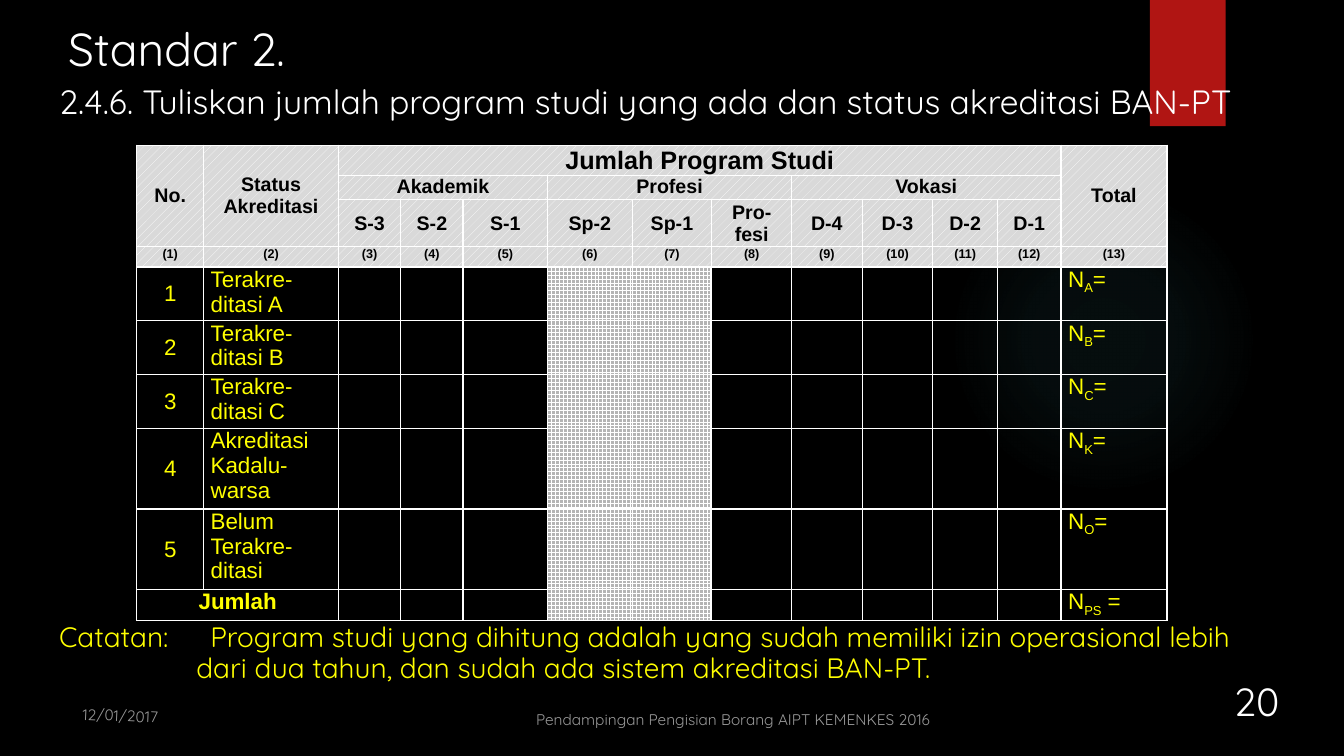
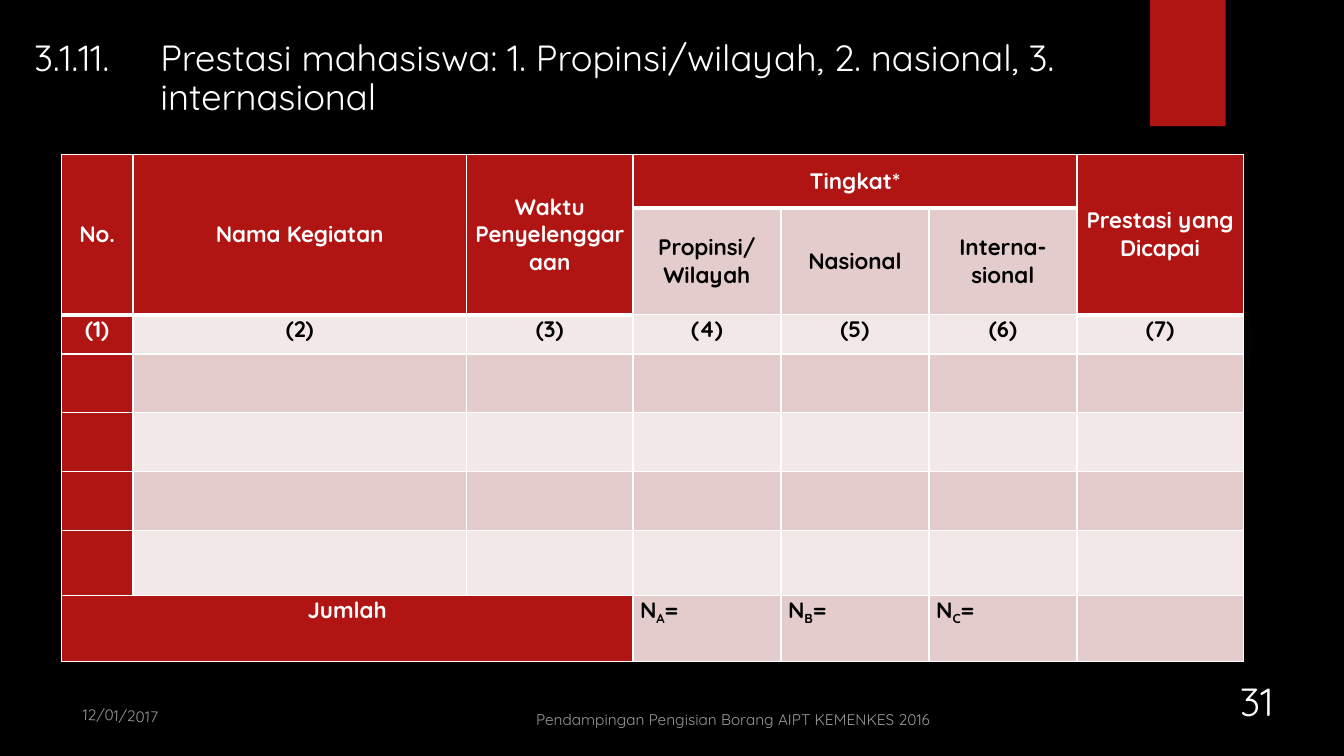
from lxml import etree
from pptx import Presentation
from pptx import util as u
from pptx.dml.color import RGBColor
from pptx.enum import dml, shapes, text
from pptx.oxml.ns import nsdecls, qn

WHITE, BLACK, YELLOW = "FFFFFF", "000000", "FFFF00"
RED, GLOW, PINK, PALE = "B01513", "50B9C1", "E4CCCC", "F2E8E7"
HATCH = (dml.MSO_PATTERN.PERCENT_20, WHITE, "D9D9D9")
MESH = (dml.MSO_PATTERN.CROSS, WHITE, "B4B4B4")
CENTER, JUSTIFY = text.PP_ALIGN.CENTER, text.PP_ALIGN.JUSTIFY
TOP, MIDDLE, BOTTOM = text.MSO_ANCHOR.TOP, text.MSO_ANCHOR.MIDDLE, text.MSO_ANCHOR.BOTTOM


def color(code):
    return RGBColor.from_string(code)


class Deck:
    """Holds the house style and the slide being built."""

    font = "Quicksand"

    def __init__(self):
        self.deck = Presentation()
        self.deck.slide_width, self.deck.slide_height = u.Cm(33.87), u.Cm(19.05)

    def start(self):
        self.page = self.deck.slides.add_slide(self.deck.slide_layouts[6])
        self.page.background.fill.solid()
        self.page.background.fill.fore_color.rgb = color(BLACK)
        self.glow(23.9, 4.65, 7.82)
        self.band(28.98, 0, 1.91, 3.18)

    def shape(self, kind, *place):
        shape = self.page.shapes.add_shape(kind, *map(u.Cm, place))
        shape.shadow.inherit = False
        shape.line.fill.background()
        return shape

    def band(self, *place):
        band = self.shape(shapes.MSO_SHAPE.RECTANGLE, *place)
        band.fill.solid()
        band.fill.fore_color.rgb = color(RED)

    def glow(self, left, top, size):
        glow = self.shape(shapes.MSO_SHAPE.OVAL, left, top, size, size)
        stops = "".join(
            f'<a:gs pos="{place}000"><a:srgbClr val="{GLOW}"><a:alpha val="{alpha}000"/></a:srgbClr></a:gs>'
            for place, alpha in ((0, 7), (36, 6), (69, 0)))
        fill = etree.fromstring(
            f'<a:gradFill {nsdecls("a")}><a:gsLst>{stops}</a:gsLst><a:path path="circle">'
            '<a:fillToRect l="50000" t="50000" r="50000" b="50000"/></a:path></a:gradFill>')
        glow._element.spPr.find(qn("a:prstGeom")).addnext(fill)

    def span(self, para, words, size, ink, bold=False, font=None, alpha=None):
        span = para.add_run()
        span.text = words
        span.font.size, span.font.bold = u.Pt(size), bold
        span.font.name = font or self.font
        span.font.color.rgb = color(ink)
        if alpha:
            tint = span._r.find(".//" + qn("a:srgbClr"))
            etree.SubElement(tint, qn("a:alpha"), val=str(alpha * 1000))
        return span

    def text_box(self, place, lines, size, ink=WHITE, spacing=None, align=None,
                 anchor=TOP, alpha=None, turn=0):
        box = self.page.shapes.add_textbox(*map(u.Cm, place))
        box.rotation = turn
        frame = box.text_frame
        frame.word_wrap, frame.vertical_anchor = True, anchor
        for number, (words, margin, indent, tab) in enumerate(lines):
            para = frame.add_paragraph() if number else frame.paragraphs[0]
            props = para._p.get_or_add_pPr()
            props.set("marL", str(u.Cm(margin)))
            props.set("indent", str(u.Cm(indent)))
            if tab:
                stops = etree.SubElement(props, qn("a:tabLst"))
                etree.SubElement(stops, qn("a:tab"), pos=str(u.Cm(tab)), algn="l")
            para.alignment = align
            if spacing:
                para.line_spacing = spacing
            self.span(para, words, size, ink, alpha=alpha)

    def line(self, place, words, size, hang=0, **style):
        self.text_box(place, [(words, hang, -hang, 0)], size, **style)

    def footer(self, number):
        self.line((30.73, 16.76, 1.88, 1.63), number, 28, align=CENTER, anchor=BOTTOM)
        self.line((13.26, 17.65, 10.72, 0.84), "Pendampingan Pengisian Borang AIPT KEMENKES 2016",
                  11, anchor=BOTTOM, alpha=60)
        self.line((1.83, 17.68, 2.74, 0.84), "12/01/2017", 11, alpha=60, turn=2.5)

    def borders(self, cell, **widths):
        props = cell._tc.get_or_add_tcPr()
        for side in "LRTB":
            line = etree.SubElement(props, qn(f"a:ln{side}"), w=str(u.Pt(widths.get(side, 1))))
            fill = etree.SubElement(line, qn("a:solidFill"))
            etree.SubElement(fill, qn("a:srgbClr"), val=WHITE)

    def paint(self, cell, fill):
        if fill is None:
            cell.fill.background()
        elif isinstance(fill, tuple):
            cell.fill.patterned()
            cell.fill.pattern = fill[0]
            cell.fill.fore_color.rgb, cell.fill.back_color.rgb = map(color, fill[1:])
        else:
            cell.fill.solid()
            cell.fill.fore_color.rgb = color(fill)

    def fill_cell(self, cell, words, fill, size, ink, bold, align, anchor, font):
        cell.margin_left = cell.margin_right = u.Cm(0.18)
        cell.margin_top = cell.margin_bottom = 0
        cell.vertical_anchor = anchor
        self.paint(cell, fill)
        para = cell.text_frame.paragraphs[0]
        para.alignment = align
        if not words:
            etree.SubElement(para._p, qn("a:endParaRPr"), sz=str(size * 100))
            return
        for part, piece in enumerate(words.split("|")):
            span = self.span(para, piece, size, ink, bold, font)
            if part % 2:
                span._r.get_or_add_rPr().set("baseline", "-25000")

    def table(self, left, top, widths, heights, rows, merges, style, heavy=()):
        frame = self.page.shapes.add_table(
            len(heights), len(widths), *map(u.Cm, (left, top, sum(widths), sum(heights))))
        table = frame.table
        table.first_row = table.horz_banding = False
        for column, width in zip(table.columns, widths):
            column.width = u.Cm(width)
        for row, height in zip(table.rows, heights):
            row.height = u.Cm(height)
        for first_row, first_col, last_row, last_col in merges:
            table.cell(first_row, first_col).merge(table.cell(last_row, last_col))
        for r, row in enumerate(rows):
            for c, words in enumerate(row):
                cell = table.cell(r, c)
                self.borders(cell, T=3 if (r - 1, c) in heavy else 1,
                             B=3 if (r, c) in heavy else 1)
                self.fill_cell(cell, words, **style(r, c))


def numbers(count):
    return [f"({n})" for n in range(1, count + 1)]


def accreditation_style(r, c):
    style = dict(font="Arial", align=CENTER, anchor=TOP)
    if r < 4:
        size = 9 if r == 3 else 18 if r == 0 and 2 <= c < 12 else 14
        anchor = MIDDLE if r in (0, 2) else TOP
        return style | dict(fill=HATCH, size=size, ink=BLACK, bold=True, anchor=anchor)
    total = r == 9 and c == 0
    style |= dict(fill=MESH if c in (5, 6) else None, size=16, ink=YELLOW, bold=total)
    if c:
        style["align"] = JUSTIFY
    elif not total:
        style["anchor"] = MIDDLE
    return style


def achievement_style(r, c):
    red = c == 0 or r == 0 or (r == 1 and c in (1, 2, 6)) or (r == 7 and c < 3)
    return dict(fill=RED if red else PINK if r % 2 else PALE, size=16,
                ink=WHITE if red else BLACK, bold=True, font=None,
                align=JUSTIFY if r == 7 and c > 2 else CENTER,
                anchor=MIDDLE if r < 2 else TOP)


def accreditation(deck):
    deck.start()
    deck.line((1.24, 2.03, 31.93, 1.4),
              "2.4.6. Tuliskan jumlah program studi yang ada dan status akreditasi BAN-PT",
              24, hang=2.54, spacing=0.9)
    deck.line((1.47, 0.76, 30.07, 1.27), "Standar 2.", 33, spacing=0.7)
    blank = [""] * 10
    statuses = [("Terakre- ditasi A", "A"), ("Terakre- ditasi B", "B"), ("Terakre- ditasi C", "C"),
                ("Akreditasi Kadalu-warsa", "K"), ("Belum Terakre-ditasi", "O")]
    rows = [
        ["No.", "Status Akreditasi", "Jumlah Program Studi", *[""] * 9, "Total"],
        ["", "", "Akademik", "", "", "Profesi", "", "", "Vokasi", "", "", "", ""],
        ["", "", "S-3", "S-2", "S-1", "Sp-2", "Sp-1", "Pro-fesi", "D-4", "D-3", "D-2", "D-1", ""],
        numbers(13),
        *[[str(n), status, *blank, f"N|{mark}|="] for n, (status, mark) in enumerate(statuses, 1)],
        ["Jumlah", "", *blank, "N|PS| ="],
    ]
    merges = [(0, 0, 2, 0), (0, 1, 2, 1), (0, 2, 0, 11), (0, 12, 2, 12),
              (1, 2, 1, 4), (1, 5, 1, 7), (1, 8, 1, 11), (9, 0, 9, 1)]
    deck.table(3.45, 3.66,
               [1.68, 3.4, 1.57, 1.57, 2.13, 2.13, 2.01, 2.01, 1.78, 1.78, 1.63, 1.6, 2.67],
               [0.71, 0.61, 1.12, 0.51, 1.24, 1.24, 1.24, 1.88, 1.88, 0.65],
               rows, merges, accreditation_style)
    deck.text_box((1.24, 15.59, 31.93, 1.9), [
        ("Catatan:\tProgram studi yang dihitung adalah yang sudah memiliki izin operasional lebih",
         0, 0, 3.14),
        ("dari dua tahun, dan sudah ada sistem akreditasi BAN-PT.", 3.46, 0, 0),
    ], 20, ink=YELLOW, spacing=0.9)
    deck.footer("20")


def achievements(deck):
    deck.start()
    deck.line((0.61, 0.89, 31.14, 2.4),
              "3.1.11.\tPrestasi mahasiswa: 1. Propinsi/wilayah, 2. nasional, 3. internasional",
              26, hang=3.18, spacing=0.9)
    rows = [
        ["No.", "Nama Kegiatan", "Waktu Penyelenggaraan", "Tingkat*", "", "", "Prestasi yang Dicapai"],
        ["", "", "", "Propinsi/Wilayah", "Nasional", "Interna-sional", ""],
        numbers(7),
        *[[""] * 7] * 4,
        ["Jumlah", "", "", "N|A|=", "N|B|=", "N|C|=", ""],
    ]
    tall = (0, 1, 2, 6)
    merges = [*[(0, c, 1, c) for c in tall], (0, 3, 0, 5), (7, 0, 7, 2)]
    heavy = {(0, c) for c in range(7)} | {(1, c) for c in tall}
    deck.table(1.55, 3.89, [1.8, 8.41, 4.19, 3.73, 3.73, 3.73, 4.19],
               [1.35, 2.69, 0.99, 1.48, 1.48, 1.48, 1.65, 1.65],
               rows, merges, achievement_style, heavy)
    deck.footer("31")


def main():
    deck = Deck()
    accreditation(deck)
    achievements(deck)
    deck.deck.save("out.pptx")


if __name__ == "__main__":
    main()
